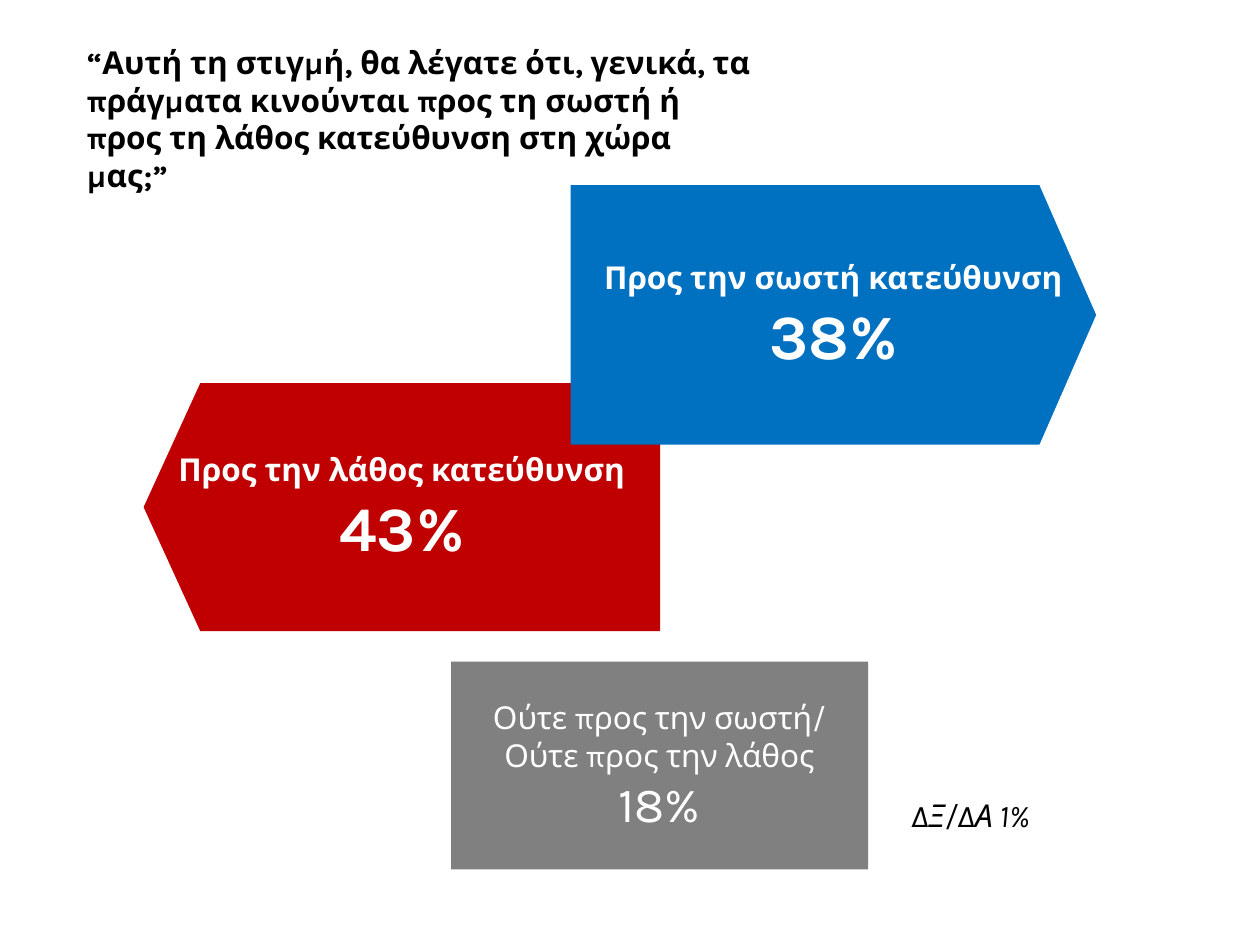
import dataclasses

import pptx
import pptx.dml.color
import pptx.enum.shapes
import pptx.enum.text
import pptx.util

Inches = pptx.util.Inches
Align = pptx.enum.text.PP_ALIGN
Anchor = pptx.enum.text.MSO_ANCHOR


@dataclasses.dataclass(frozen=True)
class Theme:
    font: str = "Karla"
    dark: str = "000000"
    light: str = "FFFFFF"
    right: str = "0070C0"
    wrong: str = "C00000"
    neither: str = "808080"
    body: int = 18
    figure: int = 28
    big_figure: int = 36


def write_text(paragraph, text, *, font, size, color, bold=False, italic=False, align=Align.LEFT):
    paragraph.alignment = align
    run = paragraph.add_run()
    run.text = text
    run.font.name = font
    run.font.size = pptx.util.Pt(size)
    run.font.bold = bold
    run.font.italic = italic
    run.font.color.rgb = pptx.dml.color.RGBColor.from_string(color)


class SlideBuilder:
    """Hold the theme and the current slide, and add each kind of element."""

    def __init__(self, presentation, theme):
        self.theme = theme
        self.slide = presentation.slides.add_slide(presentation.slide_layouts[5])

    def title(self, text, left, top, width, height):
        shape = self.slide.shapes.title
        shape.left, shape.top, shape.width, shape.height = map(Inches, (left, top, width, height))
        frame = shape.text_frame
        frame.auto_size = pptx.enum.text.MSO_AUTO_SIZE.NONE
        frame.vertical_anchor = Anchor.TOP
        frame.word_wrap = True
        write_text(frame.paragraphs[0], text, font=self.theme.font, size=self.theme.body,
                   color=self.theme.dark, bold=True)

    def fill_shape(self, shape, color, lines, figure, figure_size, *, bold, wrap):
        shape.shadow.inherit = False
        shape.fill.solid()
        shape.fill.fore_color.rgb = pptx.dml.color.RGBColor.from_string(color)
        shape.line.fill.background()
        frame = shape.text_frame
        frame.word_wrap = wrap
        frame.vertical_anchor = Anchor.MIDDLE
        sized_lines = [(line, self.theme.body) for line in lines] + [(figure, figure_size)]
        for index, (text, size) in enumerate(sized_lines):
            paragraph = frame.add_paragraph() if index else frame.paragraphs[0]
            write_text(paragraph, text, font=self.theme.font, size=size,
                       color=self.theme.light, bold=bold, align=Align.CENTER)

    def arrow(self, label, figure, color, *, tail, shoulder, tip, top, bottom):
        builder = self.slide.shapes.build_freeform(Inches(shoulder), Inches(bottom))
        points = [(tail, bottom), (tail, top), (shoulder, top), (tip, (top + bottom) / 2)]
        builder.add_line_segments([(Inches(x), Inches(y)) for x, y in points], close=True)
        self.fill_shape(builder.convert_to_shape(), color, [label], figure,
                        self.theme.big_figure, bold=True, wrap=False)

    def box(self, lines, figure, color, left, top, width, height):
        shape = self.slide.shapes.add_shape(
            pptx.enum.shapes.MSO_SHAPE.RECTANGLE, *map(Inches, (left, top, width, height)))
        self.fill_shape(shape, color, lines, figure, self.theme.figure, bold=False, wrap=True)

    def note(self, text, left, top, width, height):
        shape = self.slide.shapes.add_textbox(*map(Inches, (left, top, width, height)))
        shape.text_frame.word_wrap = False
        write_text(shape.text_frame.paragraphs[0], text, font=self.theme.font,
                   size=self.theme.body, color=self.theme.dark, italic=True)


def main():
    presentation = pptx.Presentation()
    presentation.slide_width = Inches(10)
    presentation.slide_height = Inches(7.5)
    theme = Theme()
    builder = SlideBuilder(presentation, theme)
    builder.title(
        "“Αυτή τη στιγμή, θα λέγατε ότι, γενικά, τα πράγματα κινούνται προς τη σωστή ή "
        "προς τη λάθος κατεύθυνση στη χώρα μας;”", 0.59, 0.29, 5.51, 1.01)
    builder.box(["Ούτε προς την σωστή/", "Ούτε προς την λάθος"], "18%", theme.neither,
                3.58, 5.25, 3.31, 1.65)
    builder.arrow("Προς την λάθος κατεύθυνση", "43%", theme.wrong,
                  tail=5.24, shoulder=1.59, tip=1.14, top=3.04, bottom=5.01)
    builder.arrow("Προς την σωστή κατεύθυνση", "38%", theme.right,
                  tail=4.53, shoulder=8.25, tip=8.7, top=1.47, bottom=3.53)
    builder.note("ΔΞ/ΔΑ 1%", 7.13, 6.27, 1.29, 0.4)
    presentation.save("out.pptx")


if __name__ == "__main__":
    main()
